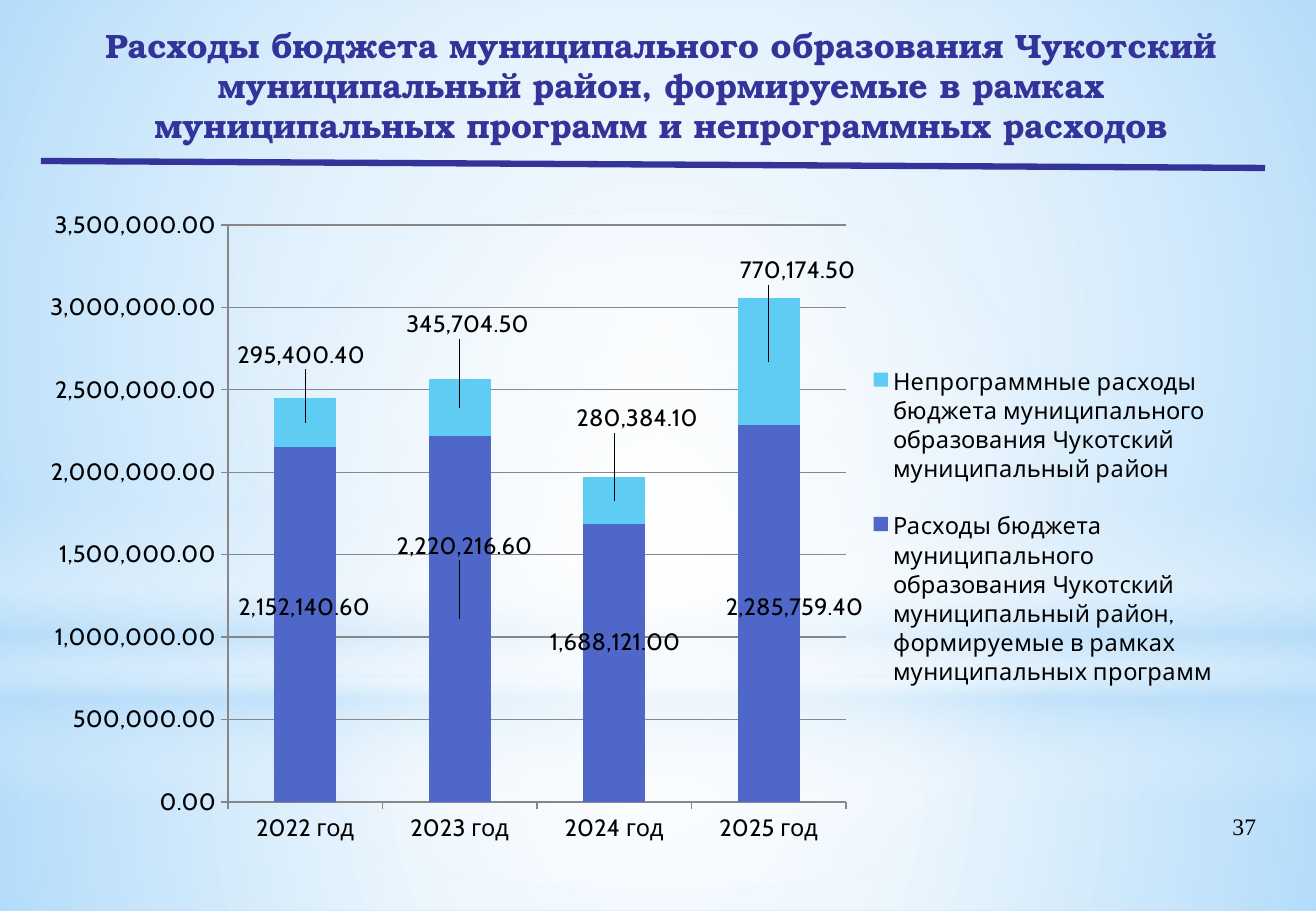
from lxml import etree
from pptx import Presentation
from pptx.chart.data import CategoryChartData
from pptx.dml.color import RGBColor
from pptx.enum.chart import XL_CHART_TYPE, XL_LEGEND_POSITION, XL_TICK_MARK
from pptx.enum.shapes import MSO_CONNECTOR, MSO_SHAPE
from pptx.enum.text import MSO_ANCHOR, PP_ALIGN
from pptx.oxml.ns import qn
from pptx.util import Pt

STACKED = XL_CHART_TYPE.COLUMN_STACKED
LEGEND_RIGHT = XL_LEGEND_POSITION.RIGHT
TICK_OUTSIDE = XL_TICK_MARK.OUTSIDE
STRAIGHT = MSO_CONNECTOR.STRAIGHT
RECTANGLE, ELLIPSE = MSO_SHAPE.RECTANGLE, MSO_SHAPE.OVAL
MIDDLE = MSO_ANCHOR.MIDDLE
CENTER, RIGHT = PP_ALIGN.CENTER, PP_ALIGN.RIGHT

SKY = RGBColor(0xB4, 0xDC, 0xFA)
WHITE = RGBColor(0xFF, 0xFF, 0xFF)
BLACK = RGBColor(0, 0, 0)
NAVY = RGBColor(0x33, 0x33, 0x99)
BLUE = RGBColor(0x4E, 0x67, 0xC8)
CYAN = RGBColor(0x5E, 0xCC, 0xF3)
GREY = RGBColor(0x87, 0x87, 0x87)

SLIDE_WIDTH, SLIDE_HEIGHT = 1316, 911
NUMBER_FORMAT = "#,##0.00"

TITLE = ("Расходы бюджета муниципального образования Чукотский муниципальный район, "
         "формируемые в рамках муниципальных программ и непрограммных расходов")
YEARS = ["2022 год", "2023 год", "2024 год", "2025 год"]
# Name, colour, values, label shifts from the bar centres in px
EXPENSES = [
    ("Расходы бюджета муниципального образования Чукотский муниципальный район, "
     "формируемые в рамках муниципальных программ", BLUE,
     (2152140.6, 2220216.6, 1688121, 2285759.4),
     ((-1, -17), (5, -73), (1, -21), (26, -6))),
    ("Непрограммные расходы бюджета муниципального образования Чукотский "
     "муниципальный район", CYAN,
     (295400.4, 345704.5, 280384.1, 770174.5),
     ((-4, -68), (8, -83), (23, -82), (29, -91))),
]


def px(length):
    return round(length * 914400 / 121.4)


def add_layout(parent, index, **settings):
    """Insert a manual chart layout as the child at the given index."""
    for old in parent.findall(qn("c:layout")):
        parent.remove(old)
    layout = etree.Element(qn("c:layout"))
    manual = etree.SubElement(layout, qn("c:manualLayout"))
    for name, value in settings.items():
        etree.SubElement(manual, qn(f"c:{name}")).set("val", str(value))
    parent.insert(index, layout)


class BudgetSlide:
    title_font = "TeX Gyre Bonum"
    chart_font = "Cabin"
    number_font = "Times New Roman"
    chart_size = Pt(14)

    def __init__(self, presentation):
        self.slide = presentation.slides.add_slide(presentation.slide_layouts[5])
        fill = self.slide.background.fill
        fill.solid()
        fill.fore_color.rgb = SKY

    def glow(self, kind, box, stops, angle=None):
        """Add a gradient shape; stops are (position, colour, opacity) in percent."""
        shape = self.slide.shapes.add_shape(kind, *map(px, box))
        shape.shadow.inherit = False
        shape.line.fill.background()
        shape.fill.solid()
        gradient = etree.Element(qn("a:gradFill"), rotWithShape="1")
        stop_list = etree.SubElement(gradient, qn("a:gsLst"))
        for position, color, opacity in stops:
            stop = etree.SubElement(stop_list, qn("a:gs"), pos=str(position * 1000))
            tint = etree.SubElement(stop, qn("a:srgbClr"), val=str(color))
            etree.SubElement(tint, qn("a:alpha"), val=str(opacity * 1000))
        if angle is None:
            circle = etree.SubElement(gradient, qn("a:path"), path="circle")
            etree.SubElement(circle, qn("a:fillToRect"),
                             l="50000", t="50000", r="50000", b="50000")
        else:
            etree.SubElement(gradient, qn("a:lin"), ang=str(angle * 60000), scaled="0")
        properties = shape._element.spPr
        properties.replace(properties.find(qn("a:solidFill")), gradient)

    def set_text(self, shape, text, alignment, size, font_name, color, bold=False):
        shape.text_frame.word_wrap = True
        paragraph = shape.text_frame.paragraphs[0]
        paragraph.text = text
        paragraph.alignment = alignment
        font = paragraph.font
        font.size, font.name, font.bold = Pt(size), font_name, bold
        font.color.rgb = color

    def title(self, box, text):
        title = self.slide.shapes.title
        title.left, title.top, title.width, title.height = map(px, box)
        title.text_frame.vertical_anchor = MIDDLE
        self.set_text(title, text, CENTER, 20, self.title_font, NAVY, bold=True)
        # Bring the title in front of the backdrop
        self.slide.shapes[-1]._element.addnext(title._element)

    def page_number(self, box, text):
        text_box = self.slide.shapes.add_textbox(*map(px, box))
        self.set_text(text_box, text, RIGHT, 14, self.number_font, BLACK)

    def rule(self, start, end):
        line = self.slide.shapes.add_connector(STRAIGHT, *map(px, start + end))
        line.line.color.rgb = NAVY
        line.line.width = Pt(3.75)
        etree.SubElement(line._element.spPr, qn("a:effectLst"))

    def style_font(self, font):
        font.size, font.name = self.chart_size, self.chart_font
        font.color.rgb = BLACK

    def chart(self, box, plot_box, legend_box):
        data = CategoryChartData(number_format=NUMBER_FORMAT)
        data.categories = YEARS
        for name, _, values, _ in EXPENSES:
            data.add_series(name, values)
        chart = self.slide.shapes.add_chart(STACKED, *map(px, box), data).chart
        self.style_font(chart.font)
        chart.has_title = False
        plot = chart.plots[0]
        plot.gap_width, plot.overlap = 150, 100
        plot.vary_by_categories = False

        # Axes
        for axis in (chart.category_axis, chart.value_axis):
            axis.major_tick_mark = TICK_OUTSIDE
            axis.format.line.color.rgb = GREY
            self.style_font(axis.tick_labels.font)
        axis = chart.value_axis
        axis.minimum_scale, axis.maximum_scale, axis.major_unit = 0, 3500000, 500000
        axis.major_gridlines.format.line.color.rgb = GREY
        axis.tick_labels.number_format = NUMBER_FORMAT
        axis.tick_labels.number_format_is_linked = False

        # Series and their shifted labels
        for series, (_, color, _, shifts) in zip(plot.series, EXPENSES):
            series.format.fill.solid()
            series.format.fill.fore_color.rgb = color
            labels = series.data_labels
            labels.show_value = True
            labels.number_format = NUMBER_FORMAT
            labels.number_format_is_linked = False
            self.style_font(labels.font)
            for index, (across, down) in enumerate(shifts):
                self.style_font(series.points[index].data_label.font)
                label = labels._element.findall(qn("c:dLbl"))[index]
                add_layout(label, 1, x=round(across / box[2], 4), y=round(down / box[3], 4))

        # Legend and plot area
        chart.has_legend = True
        chart.legend.position = LEGEND_RIGHT
        chart.legend.include_in_layout = False
        self.style_font(chart.legend.font)
        plot_area = chart._chartSpace.chart.plotArea
        self.place(plot_area, 0, plot_box, box, layoutTarget="inner")
        self.place(chart.legend._element, 1, legend_box, box)

    def place(self, part, index, part_box, box, **settings):
        left, top, width, height = part_box
        add_layout(part, index, **settings, xMode="edge", yMode="edge",
                   x=round((left - box[0]) / box[2], 4), y=round((top - box[1]) / box[3], 4),
                   w=round(width / box[2], 4), h=round(height / box[3], 4))


def main():
    presentation = Presentation()
    presentation.slide_width = px(SLIDE_WIDTH)
    presentation.slide_height = px(SLIDE_HEIGHT)
    slide = BudgetSlide(presentation)

    # Backdrop
    slide.glow(RECTANGLE, (0, 678, SLIDE_WIDTH, 233),
               [(0, WHITE, 91), (37, WHITE, 76), (100, SKY, 79)])
    slide.glow(RECTANGLE, (0, 0, SLIDE_WIDTH, 678),
               [(0, WHITE, 89), (48, WHITE, 62), (100, SKY, 79)])
    slide.glow(RECTANGLE, (0, 500, SLIDE_WIDTH, 304),
               [(0, WHITE, 0), (29, WHITE, 30), (45, SKY, 40),
                (55, WHITE, 26), (65, SKY, 60), (100, WHITE, 0)], angle=90)
    slide.glow(ELLIPSE, (0, 212, SLIDE_WIDTH, 678), [(0, WHITE, 100), (56, WHITE, 0)])

    # Content
    slide.title((69, 28, 1184, 114), TITLE)
    slide.page_number((961, 806, 307, 63), "37")
    slide.rule((41, 161), (1265, 168))
    slide.chart((27, 197, 1208, 659), plot_box=(228, 225, 618, 577),
                legend_box=(862, 340, 362, 375))
    presentation.save("out.pptx")


if __name__ == "__main__":
    main()
